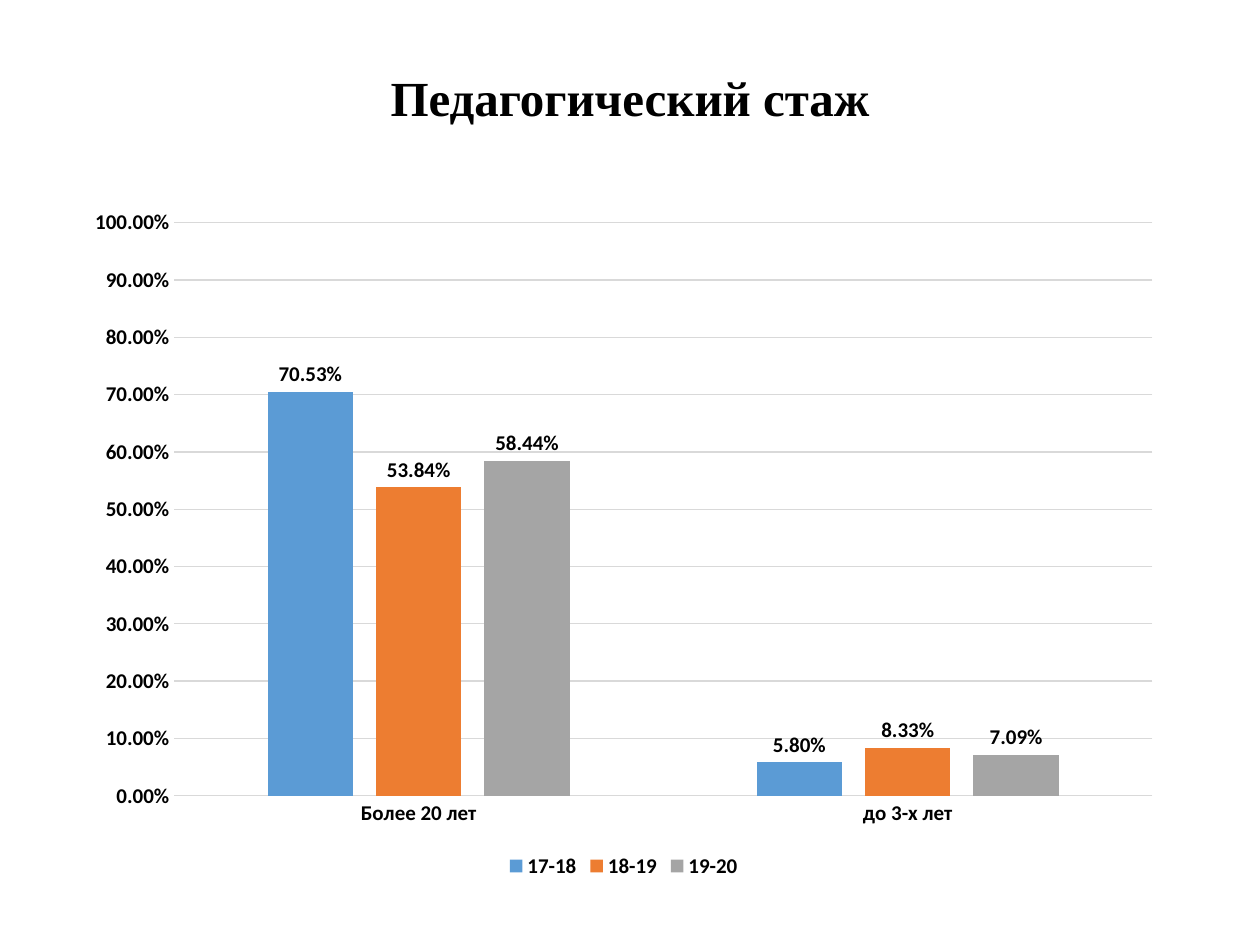
import pptx
import pptx.chart.data
import pptx.dml.color
import pptx.enum.chart
import pptx.enum.text
import pptx.util

TITLE = "Педагогический стаж"
CATEGORIES = ["Более 20 лет", "до 3-х лет"]
SERIES = {
    "17-18": [0.7053, 0.058],
    "18-19": [0.5384, 0.0833],
    "19-20": [0.5844, 0.0709],
}
PERCENT = "0.00%"

THEME = {
    "title_font": "Times New Roman",
    "chart_font": "Calibri",
    "title_size": 28,
    "chart_size": 12,
    "text": "000000",
    "grid": "D9D9D9",
    "grid_width": 0.75,
    "series": ["5B9BD5", "ED7D31", "A5A5A5"],
}

WIDTH, HEIGHT = 10, 7.5
# Shares of the slide: left, top, width, height
TITLE_AREA = (0.069, 0.036, 0.862, 0.14)
CHART_AREA = (0.058, 0.208, 0.874, 0.727)


def place(area):
    left, top, width, height = area
    return [pptx.util.Inches(length) for length in
            (left * WIDTH, top * HEIGHT, width * WIDTH, height * HEIGHT)]


def rgb(color):
    return pptx.dml.color.RGBColor.from_string(color)


def style_font(font, name, size, bold=True, color=THEME["text"]):
    font.name = name
    font.size = pptx.util.Pt(size)
    font.bold = bold
    font.color.rgb = rgb(color)


def style_chart_font(font):
    style_font(font, THEME["chart_font"], THEME["chart_size"])


def style_line(line):
    line.color.rgb = rgb(THEME["grid"])
    line.width = pptx.util.Pt(THEME["grid_width"])


def add_text(slide, text, area, *, font, size, bold, align, anchor, spacing):
    frame = slide.shapes.add_textbox(*place(area)).text_frame
    frame.word_wrap = True
    frame.vertical_anchor = anchor
    paragraph = frame.paragraphs[0]
    paragraph.alignment = align
    paragraph.line_spacing = spacing
    run = paragraph.add_run()
    run.text = text
    style_font(run.font, font, size, bold)


def add_experience_chart(slide):
    data = pptx.chart.data.CategoryChartData(number_format=PERCENT)
    data.categories = CATEGORIES
    for name, values in SERIES.items():
        data.add_series(name, values)
    chart = slide.shapes.add_chart(
        pptx.enum.chart.XL_CHART_TYPE.COLUMN_CLUSTERED, *place(CHART_AREA), data
    ).chart
    style_chart_font(chart.font)
    chart.has_title = False

    chart.has_legend = True
    chart.legend.position = pptx.enum.chart.XL_LEGEND_POSITION.BOTTOM
    chart.legend.include_in_layout = False
    style_chart_font(chart.legend.font)

    for axis in (chart.category_axis, chart.value_axis):
        axis.major_tick_mark = pptx.enum.chart.XL_TICK_MARK.NONE
        axis.minor_tick_mark = pptx.enum.chart.XL_TICK_MARK.NONE
        style_chart_font(axis.tick_labels.font)
    style_line(chart.category_axis.format.line)

    value_axis = chart.value_axis
    value_axis.minimum_scale, value_axis.maximum_scale = 0, 1
    value_axis.major_unit = 0.1
    value_axis.format.line.fill.background()
    value_axis.tick_labels.number_format = PERCENT
    value_axis.tick_labels.number_format_is_linked = False
    style_line(value_axis.major_gridlines.format.line)

    plot = chart.plots[0]
    plot.vary_by_categories = False
    plot.gap_width = 219
    plot.overlap = -27
    for series, color in zip(plot.series, THEME["series"]):
        series.format.fill.solid()
        series.format.fill.fore_color.rgb = rgb(color)
        labels = series.data_labels
        labels.show_value = True
        labels.position = pptx.enum.chart.XL_LABEL_POSITION.OUTSIDE_END
        labels.number_format = PERCENT
        labels.number_format_is_linked = False
        style_chart_font(labels.font)


def main():
    presentation = pptx.Presentation()
    presentation.slide_width = pptx.util.Inches(WIDTH)
    presentation.slide_height = pptx.util.Inches(HEIGHT)
    slide = presentation.slides.add_slide(presentation.slide_layouts[6])
    add_text(slide, TITLE, TITLE_AREA,
             font=THEME["title_font"], size=THEME["title_size"], bold=True,
             align=pptx.enum.text.PP_ALIGN.CENTER,
             anchor=pptx.enum.text.MSO_ANCHOR.MIDDLE, spacing=0.9)
    add_experience_chart(slide)
    presentation.save("out.pptx")


if __name__ == "__main__":
    main()
